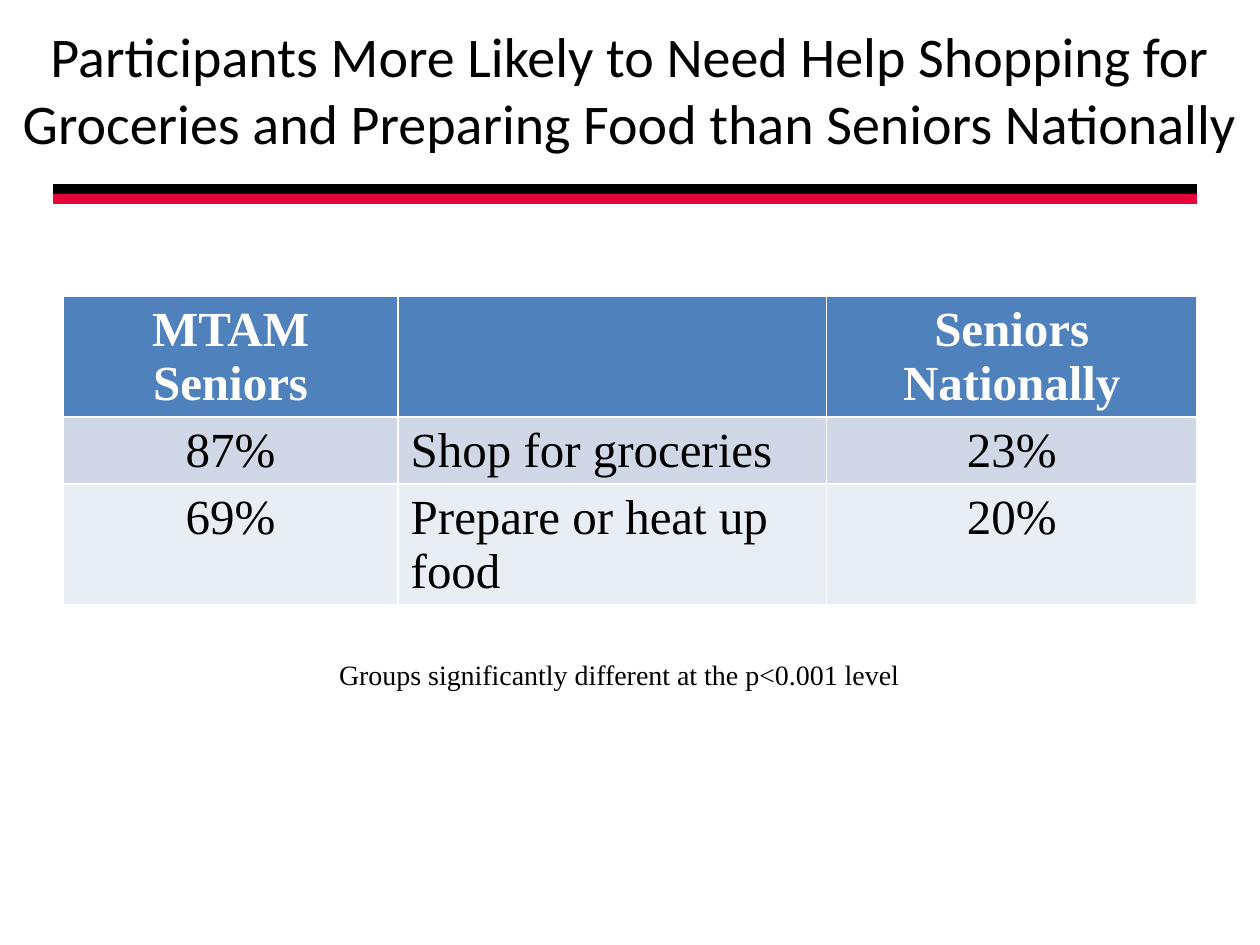
from pptx import Presentation
from pptx.dml.color import RGBColor
from pptx.enum.shapes import MSO_CONNECTOR as CONN
from pptx.enum.text import MSO_ANCHOR as ANCHOR, MSO_AUTO_SIZE as AUTO, PP_ALIGN as ALIGN
from pptx.oxml.ns import qn
from pptx.util import Inches, Pt
from lxml.etree import SubElement

# Content
TITLE = ("Participants More Likely to Need Help Shopping for Groceries "
         "and Preparing Food than Seniors Nationally")
ROWS = [
    ("MTAM Seniors", "", "Seniors Nationally"),
    ("87%", "Shop for groceries", "23%"),
    ("69%", "Prepare or heat up food", "20%"),
]
NOTE = "Groups significantly different at the p<0.001 level"

# Layout and theme
COL_WIDTHS = (2.66, 3.4, 2.94)
COL_ALIGNS = (ALIGN.CENTER, ALIGN.LEFT, ALIGN.CENTER)
ROW_HEIGHT = 0.41
THEME = {
    "head_font": "Calibri", "body_font": "Times New Roman",
    "title": 32, "cell": 28, "note": 16, "rule": 6,
    "text": "000000", "header_text": "FFFFFF", "accent": "E5053A",
    "row_fills": ("4F81BD", "D0D8E8", "E9EDF4"),
}


def rgb(name):
    return RGBColor.from_string(THEME[name])


def write(tf, text, font, size, color="text", align=ALIGN.CENTER, bold=False):
    tf.text = text
    p = tf.paragraphs[0]
    p.alignment = align
    for f in (p.font, *(r.font for r in p.runs)):
        f.name, f.size, f.bold = THEME[font], Pt(THEME[size]), bold
        f.color.rgb = rgb(color)


def add_rule(slide, y, color):
    line = slide.shapes.add_connector(
        CONN.STRAIGHT, Inches(0.42), Inches(y), Inches(9.5), Inches(y))
    line.line.color.rgb = rgb(color)
    line.line.width = Pt(THEME["rule"])
    SubElement(line._element.spPr, qn("a:effectLst"))


prs = Presentation()
prs.slide_width, prs.slide_height = Inches(10), Inches(7.5)
slide = prs.slides.add_slide(prs.slide_layouts[5])

# Double rule under the title
add_rule(slide, 1.5, "text")
add_rule(slide, 1.58, "accent")

# Title
title = slide.shapes.title
title.left, title.top = Inches(0), Inches(0.08)
title.width, title.height = Inches(10), Inches(1.25)
write(title.text_frame, TITLE, "head_font", "title")
title.text_frame.auto_size = AUTO.NONE
title.text_frame.vertical_anchor = ANCHOR.MIDDLE

# Comparison table; the default style supplies the white borders
table = slide.shapes.add_table(
    len(ROWS), len(COL_WIDTHS), Inches(0.5), Inches(2.35),
    Inches(sum(COL_WIDTHS)), Inches(ROW_HEIGHT * len(ROWS))).table
for col, width in zip(table.columns, COL_WIDTHS):
    col.width = Inches(width)
for i, (row, fill) in enumerate(zip(ROWS, THEME["row_fills"])):
    header = i == 0
    for j, (text, align) in enumerate(zip(row, COL_ALIGNS)):
        cell = table.cell(i, j)
        cell.fill.solid()
        cell.fill.fore_color.rgb = RGBColor.from_string(fill)
        write(cell.text_frame, text, "body_font", "cell",
              "header_text" if header else "text", align, header)

# Significance note
note = slide.shapes.add_textbox(Inches(0.08), Inches(5.17), Inches(9.67), Inches(0.37))
note.text_frame.word_wrap = True
note.text_frame.auto_size = AUTO.SHAPE_TO_FIT_TEXT
write(note.text_frame, NOTE, "body_font", "note")

prs.save("out.pptx")
